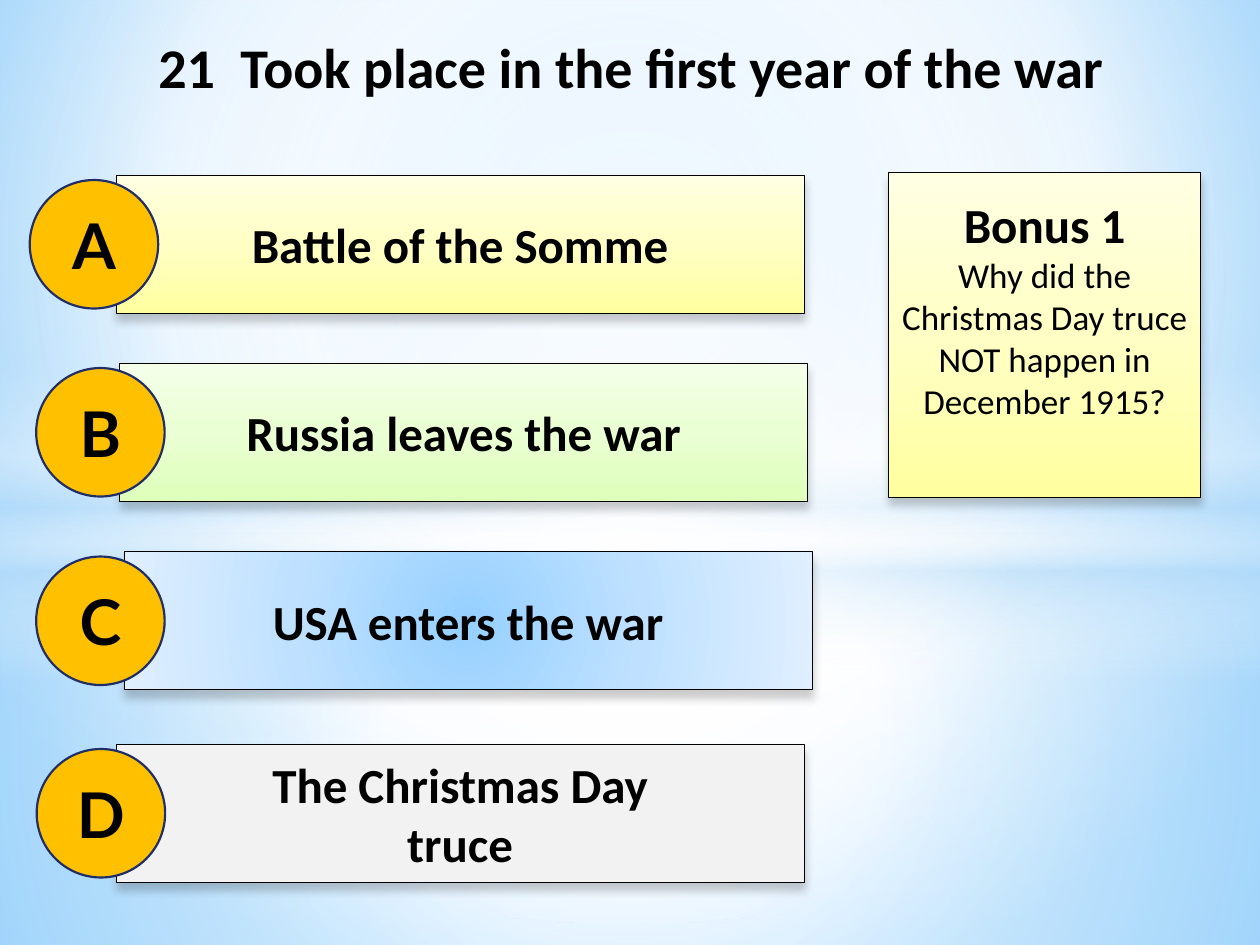
from lxml import etree
from pptx import Presentation
from pptx import util as u
from pptx.dml.color import RGBColor
from pptx.enum import shapes, text
from pptx.oxml.ns import qn

RECT, OVAL = shapes.MSO_SHAPE.RECTANGLE, shapes.MSO_SHAPE.OVAL
MID, TOP = text.MSO_ANCHOR.MIDDLE, text.MSO_ANCHOR.TOP
YELLOW = [(0, "FFFFA0"), (50, "FFFFC5"), (100, "FFFFE3")]
GREEN = [(0, "DEFFBB"), (50, "EAFFD3"), (100, "F4FFE9")]
BLUE = [(0, "96D0FF"), (50, "BFE1FF"), (100, "E0EFFF")]
CENTRE = (50, 50, 50, 50)


def rgb(code):
    return RGBColor.from_string(code)


def sub(node, tag, **attrs):
    return etree.SubElement(node, qn("a:" + tag), {k: str(v) for k, v in attrs.items()})


def tint(node, code, alpha):
    clr = sub(node, "srgbClr", val=code)
    if alpha < 100:
        sub(clr, "alpha", val=alpha * 1000)


def blend(fill, root, stops, angle=None, focus=CENTRE):
    """Fill with a gradient: linear when an angle is given, else circular."""
    fill.gradient()
    grad = root.find(".//" + qn("a:gradFill"))
    for child in list(grad):
        grad.remove(child)
    group = sub(grad, "gsLst")
    for pos, code, *alpha in stops:
        tint(sub(group, "gs", pos=pos * 1000), code, alpha[0] if alpha else 100)
    if angle is not None:
        sub(grad, "lin", ang=angle * 60000, scaled=0)
    else:
        sides = {k: v * 1000 for k, v in zip("ltrb", focus)}
        sub(sub(grad, "path", path="circle"), "fillToRect", **sides)


def shape(slide, kind, box, paint, angle=None, edge=None, width=0.5):
    item = slide.shapes.add_shape(kind, *map(u.Cm, box))
    item.shadow.inherit = False
    if isinstance(paint, str):
        item.fill.solid()
        item.fill.fore_color.rgb = rgb(paint)
    else:
        blend(item.fill, item._element.spPr, paint, angle)
    if edge:
        item.line.color.rgb = rgb(edge)
        item.line.width = u.Pt(width)
    else:
        item.line.fill.background()
    return item


def write(item, lines, anchor=MID, font="Calibri"):
    """Write centred paragraphs given as (words, size, bold)."""
    frame = item.text_frame
    frame.text = "\n".join(words for words, _, _ in lines)
    frame.word_wrap = True
    frame.vertical_anchor = anchor
    for para, (_, size, bold) in zip(frame.paragraphs, lines):
        para.alignment = text.PP_ALIGN.CENTER
        for run in para.runs:
            run.font.name, run.font.size, run.font.bold = font, u.Pt(size), bold
            run.font.color.rgb = rgb("000000")


def card(slide, box, paint, angle=None):
    """Outlined panel with a soft shadow below."""
    item = shape(slide, RECT, box, paint, angle, "000000")
    effect = item._element.spPr.find(qn("a:effectLst"))
    shade = sub(effect, "outerShdw", blurRad=u.Pt(5), dist=u.Pt(4),
                dir=90 * 60000, rotWithShape=0)
    tint(shade, "000000", 20)
    return item


def option(slide, mark, words, left, top, spot, paint, angle):
    write(card(slide, (left, top, 13.87, 2.79), paint, angle), [(words, 28, True)])
    disc = shape(slide, OVAL, (spot, top + 0.1, 2.59, 2.59), "FFC000",
                 edge="1F2E69", width=1.25)
    write(disc, [(mark, 36, True)], font="Lato")


def backdrop(slide):
    blend(slide.background.fill, slide._element,
          [(0, "9ED5FF"), (60, "FFFFFF"), (100, "5BB9FF")], focus=(20, 10, 20, 60))
    # Lower and upper glow
    shape(slide, RECT, (0, 10.74, 25.4, 8.31),
          [(0, "FFFFFF", 91), (37, "FFFFFF", 76), (100, "B4DCFA", 79)])
    shape(slide, RECT, (0, 0, 25.4, 10.74),
          [(0, "FFFFFF", 89), (48, "FFFFFF", 62), (100, "B4DCFA", 79)])
    # Horizon band and central light
    shape(slide, RECT, (0, 7.37, 25.4, 6.35),
          [(0, "FFFFFF", 0), (29, "FFFFFF", 30), (45, "B4DCFA", 40),
           (55, "FFFFFF", 26), (65, "B4DCFA", 60), (100, "FFFFFF", 0)], 90)
    shape(slide, OVAL, (0, 4.45, 25.4, 14.17), [(0, "FFFFFF"), (54, "FFFFFF", 0)])


def heading(slide, words):
    title = slide.shapes.title
    title.left, title.top, title.width, title.height = map(u.Cm, (0.53, 0.53, 24.4, 2.7))
    write(title, [(words, 32, True)], TOP)
    slide.shapes._spTree.append(title._element)  # in front of the backdrop


def bonus(slide):
    note = card(slide, (17.91, 3.48, 6.3, 6.55), YELLOW, 270)
    write(note, [("Bonus 1", 28, True),
                 ("Why did the Christmas Day truce NOT happen in December 1915?", 20, False)],
          TOP)
    frame = note.text_frame
    frame.margin_top = u.Cm(0.45)
    frame.margin_left = frame.margin_right = u.Cm(0.2)


def main():
    deck = Presentation()
    deck.slide_width, deck.slide_height = u.Cm(25.4), u.Cm(19.05)
    slide = deck.slides.add_slide(deck.slide_layouts[5])
    backdrop(slide)
    heading(slide, "21  Took place in the first year of the war")

    # Answers: mark, words, left, top, disc left, paint, angle
    for row in (
        ("A", "Battle of the Somme", 2.34, 3.53, 0.6, YELLOW, 270),
        ("B", "Russia leaves the war", 2.41, 7.32, 0.73, GREEN, 270),
        ("C", "USA enters the war", 2.5, 11.12, 0.73, BLUE, None),
        ("D", "The Christmas Day\vtruce", 2.34, 15, 0.74, "F2F2F2", None),
    ):
        option(slide, *row)
    bonus(slide)
    deck.save("out.pptx")


if __name__ == "__main__":
    main()
